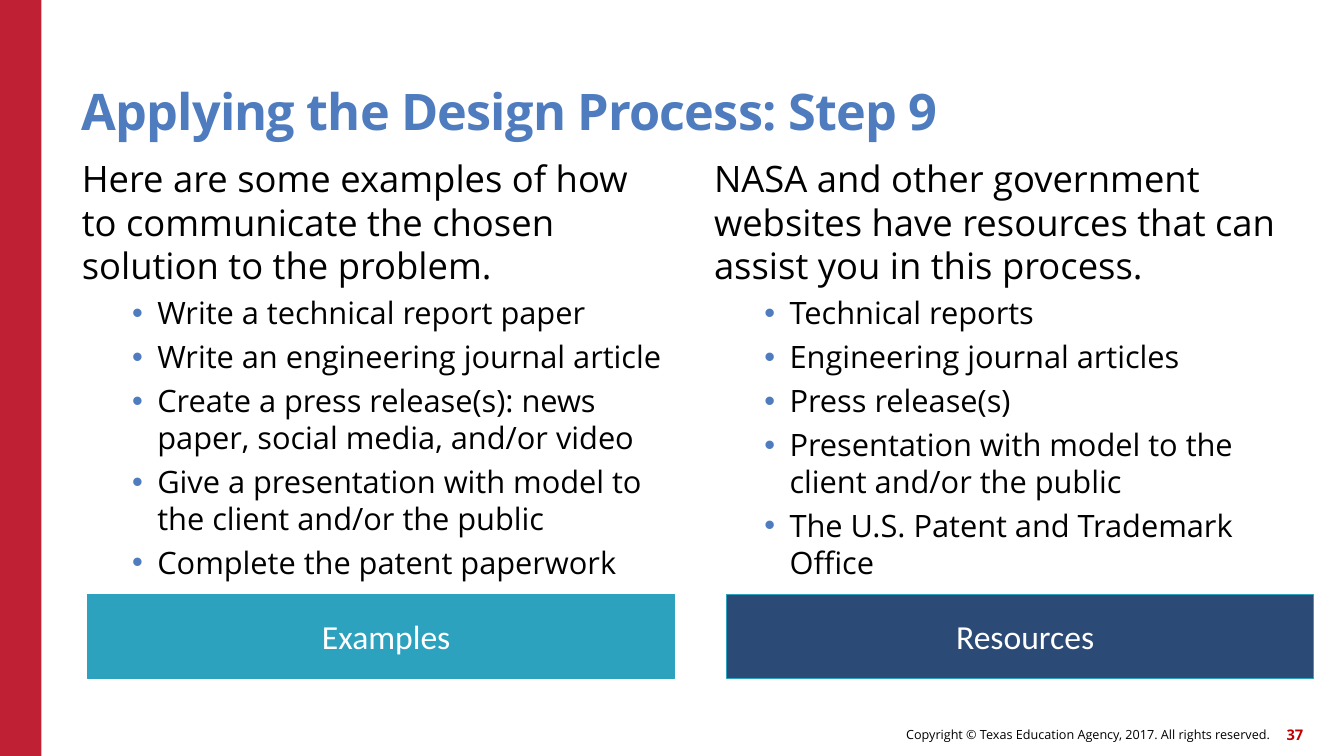
from lxml.etree import SubElement
from pptx import Presentation
from pptx.dml.color import RGBColor
from pptx.enum.shapes import MSO_SHAPE
from pptx.enum.text import MSO_ANCHOR, PP_ALIGN
from pptx.oxml.ns import qn
from pptx.util import Pt

# Content
TITLE = "Applying the Design Process: Step 9"
COLUMNS = [
    {
        "intro": "Here are some examples of how to communicate the chosen solution to the problem.",
        "bullets": [
            "Write a technical report paper",
            "Write an engineering journal article",
            "Create a press release(s): news paper, social media, and/or video",
            "Give a presentation with model to the client and/or the public",
            "Complete the patent paperwork",
        ],
        "label": "Examples",
        "left": 58.4,
        "label_left": 62.5,
        "fill": "2DA2BF",
    },
    {
        "intro": "NASA and other government websites have resources that can assist you in this process.",
        "bullets": [
            "Technical reports",
            "Engineering journal articles",
            "Press release(s)",
            "Presentation with model to the client and/or the public",
            "The U.S. Patent and Trademark Office",
        ],
        "label": "Resources",
        "left": 510,
        "label_left": 519,
        "fill": "2B4A76",
    },
]
COPYRIGHT = "Copyright © Texas Education Agency, 2017. All rights reserved."
PAGE_NUMBER = "37"

# Style
FONT, LABEL_FONT = "Open Sans", "Calibri"
BLUE, TEAL, RED, DARK_RED = "4E7CBE", "2DA2BF", "C02033", "C00000"
BLACK, WHITE = "000000", "FFFFFF"
PAGE_WIDTH, PAGE_HEIGHT = 960, 540
COLUMN_WIDTH, LABEL_WIDTH = 420, 419.4


def color(value):
    return RGBColor.from_string(value)


def style(para, size, tone, font=FONT, bold=False):
    for span in para.runs:
        span.font.name = font
        span.font.size = Pt(size)
        span.font.bold = bold
        span.font.color.rgb = color(tone)


def set_insets(frame, left=0, top=0, right=0, bottom=0):
    frame.margin_left, frame.margin_top = Pt(left), Pt(top)
    frame.margin_right, frame.margin_bottom = Pt(right), Pt(bottom)


def add_text(left, top, width, height, anchor=MSO_ANCHOR.TOP):
    box = page.shapes.add_textbox(Pt(left), Pt(top), Pt(width), Pt(height))
    frame = box.text_frame
    frame.word_wrap = True
    frame.vertical_anchor = anchor
    set_insets(frame)
    return frame


def add_rectangle(left, top, width, height, fill, line=None):
    box = page.shapes.add_shape(
        MSO_SHAPE.RECTANGLE, Pt(left), Pt(top), Pt(width), Pt(height))
    box.shadow.inherit = False
    box.fill.solid()
    box.fill.fore_color.rgb = color(fill)
    if line:
        box.line.color.rgb = color(line)
        box.line.width = Pt(0.75)
    else:
        box.line.fill.background()
    return box


def add_bullet(para):
    properties = para._p.get_or_add_pPr()
    properties.set("marL", str(Pt(54)))
    properties.set("indent", str(Pt(-18)))
    bullet_color = SubElement(properties, qn("a:buClr"))
    SubElement(bullet_color, qn("a:srgbClr"), val=BLUE)
    SubElement(properties, qn("a:buFont"), typeface="Arial")
    SubElement(properties, qn("a:buChar"), char="•")


deck = Presentation()
deck.slide_width, deck.slide_height = Pt(PAGE_WIDTH), Pt(PAGE_HEIGHT)
page = deck.slides.add_slide(deck.slide_layouts[6])

# Side band
add_rectangle(0, 0, 29.5, PAGE_HEIGHT, RED)

# Footer
footer = [
    (COPYRIGHT, 442, 513, 465, 9, BLACK, False),
    (PAGE_NUMBER, 900.7, 513.4, 30.2, 10.5, DARK_RED, True),
]
for text, left, top, width, size, tone, bold in footer:
    frame = add_text(left, top, width, 23, MSO_ANCHOR.MIDDLE)
    frame.text = text
    frame.paragraphs[0].alignment = PP_ALIGN.RIGHT
    style(frame.paragraphs[0], size, tone, bold=bold)

# Title
frame = add_text(58.3, 31.7, 792, 69.1, MSO_ANCHOR.BOTTOM)
frame.text = TITLE
heading = frame.paragraphs[0]
heading.line_spacing = 0.9
style(heading, 36, BLUE, bold=True)
heading.runs[0].font._element.set("spc", "-60")

# Columns with their labels
for column in COLUMNS:
    frame = add_text(column["left"], 111.6, COLUMN_WIDTH, 373)
    frame.text = column["intro"]
    style(frame.paragraphs[0], 26, BLACK)
    for text in column["bullets"]:
        para = frame.add_paragraph()
        para.text = text
        add_bullet(para)
        para.space_before = Pt(5)
        style(para, 22, BLACK)

    label = add_rectangle(
        column["label_left"], 424.8, LABEL_WIDTH, 59.6, column["fill"], TEAL)
    frame = label.text_frame
    frame.word_wrap = True
    frame.vertical_anchor = MSO_ANCHOR.MIDDLE
    set_insets(frame, 14.4, 3.6, 7.2, 3.6)
    frame.text = column["label"]
    frame.paragraphs[0].alignment = PP_ALIGN.CENTER
    style(frame.paragraphs[0], 24, WHITE, LABEL_FONT)

deck.save("out.pptx")
